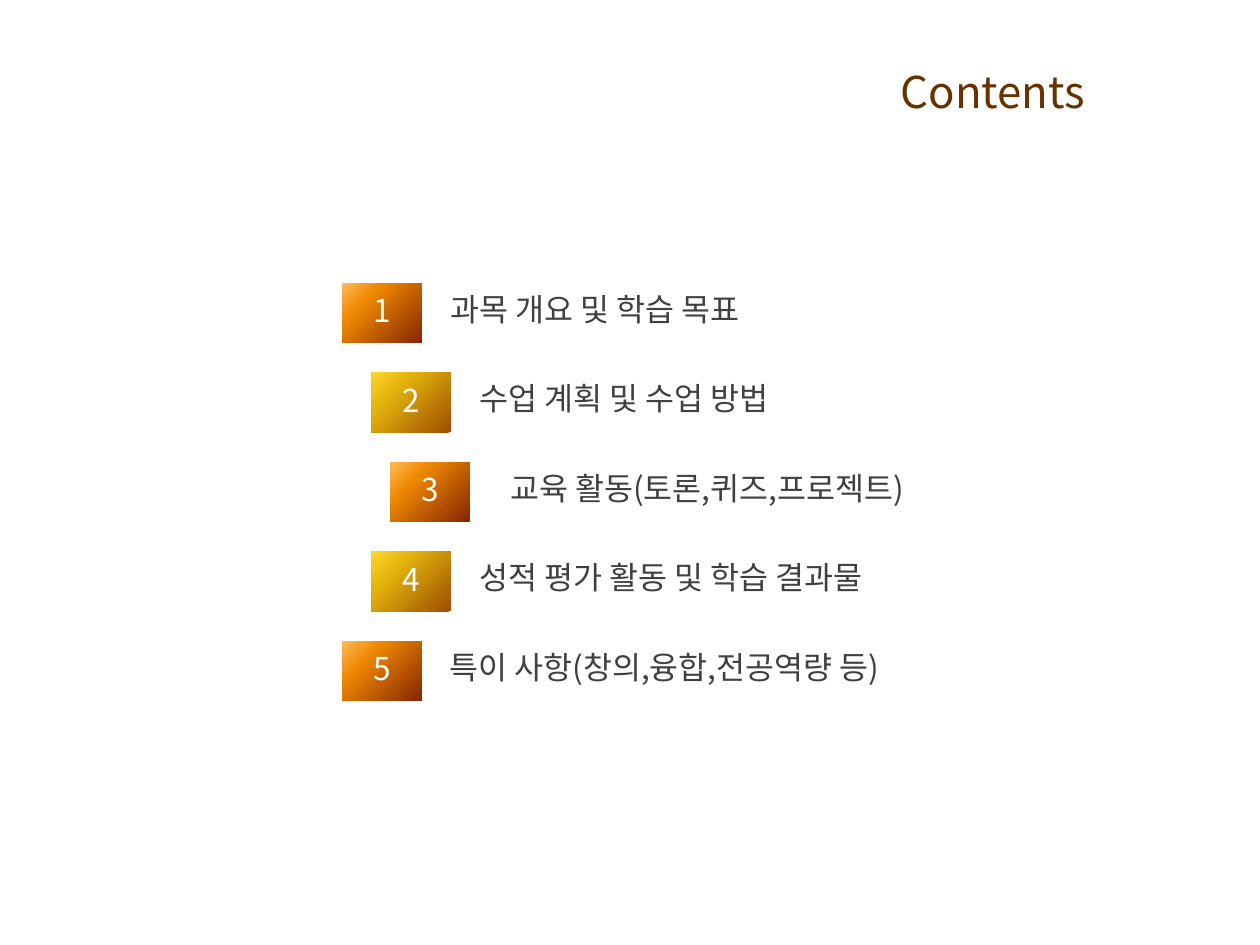
"""Build a contents slide with five numbered, staggered entries."""
import copy

import pptx
import pptx.dml.color
import pptx.enum.shapes
import pptx.enum.text
import pptx.util
from lxml import etree

RGB = pptx.dml.color.RGBColor
BROWN = RGB(0x66, 0x33, 0x00)
GRAY = RGB(0x40, 0x40, 0x40)
WHITE = RGB(0xFC, 0xFC, 0xFD)
ORANGE = (RGB(0x86, 0x26, 0x00), RGB(0xEE, 0x88, 0x00), RGB(0xFF, 0xBB, 0x57))
GOLD = (RGB(0x9E, 0x4F, 0x00), RGB(0xE2, 0xB4, 0x0C), RGB(0xFF, 0xD7, 0x2D))
STOPS = (0, 0.71, 1)
FONT = "Noto Sans CJK KR"
ALIGN = pptx.enum.text.PP_ALIGN
ANCHOR = pptx.enum.text.MSO_ANCHOR

prs = pptx.Presentation()
prs.slide_width, prs.slide_height = pptx.util.Inches(10), pptx.util.Inches(7.5)
W, H = prs.slide_width, prs.slide_height
ROW_TOP, ROW_STEP = 0.3 * H, 0.0947 * H
TILE_W, TILE_H = 0.063 * W, 0.0627 * H


def write(sp, text, size, color, align, anchor, wrap=True):
    tf = sp.text_frame
    for name, value in {"word_wrap": wrap, "vertical_anchor": anchor}.items():
        setattr(tf, name, value)
    p = tf.paragraphs[0]
    p.alignment = align
    p.line_spacing = 0.85
    r = p.add_run()
    r.text = text
    for name, value in {"size": pptx.util.Pt(size), "name": FONT}.items():
        setattr(r.font, name, value)
    r.font.color.rgb = color
    ea = etree.SubElement(r.font._element, pptx.oxml.ns.qn("a:ea"))
    ea.set("typeface", FONT)
    return r


s = prs.slides.add_slide(prs.slide_layouts[5])
sp = s.shapes.title
box = {"left": 0.705 * W, "top": 0.07 * H, "width": 0.172 * W, "height": 0.07 * H}
for name, value in box.items():
    setattr(sp, name, int(value))
write(sp, "Contents", 25, BROWN, ALIGN.LEFT, ANCHOR.TOP, False)

entries = [
    ("과목 개요 및 학습 목표", 0.272, 0.348, 0.328),
    ("수업 계획 및 수업 방법", 0.295, 0.371, 0.328),
    ("교육 활동(토론,퀴즈,프로젝트)", 0.31, 0.395, 0.395),
    ("성적 평가 활동 및 학습 결과물", 0.295, 0.371, 0.373),
    ("특이 사항(창의,융합,전공역량 등)", 0.272, 0.347, 0.395),
]
for i, (label, tile_x, label_x, label_w) in enumerate(entries):
    top = int(ROW_TOP + i * ROW_STEP)
    sp = s.shapes.add_shape(pptx.enum.shapes.MSO_SHAPE.RECTANGLE,
                            int(tile_x * W), top, int(TILE_W), int(TILE_H))
    sp.shadow.inherit = False
    sp.line.fill.background()
    sp.fill.gradient()
    sp.fill.gradient_angle = 135
    gs = sp.fill._fill._gradFill.gsLst
    gs.append(copy.deepcopy(gs[0]))
    for stop, pos, color in zip(sp.fill.gradient_stops, STOPS, (ORANGE, GOLD)[i % 2]):
        stop.position = pos
        stop.color.rgb = color
    r = write(sp, str(i + 1), 18, WHITE, ALIGN.CENTER, ANCHOR.MIDDLE)
    r.font._element.set("spc", "50")

    sp = s.shapes.add_textbox(int(label_x * W), top, int(label_w * W), int(0.06 * H))
    write(sp, label, 18, GRAY, ALIGN.LEFT, ANCHOR.MIDDLE)

prs.save("out.pptx")
